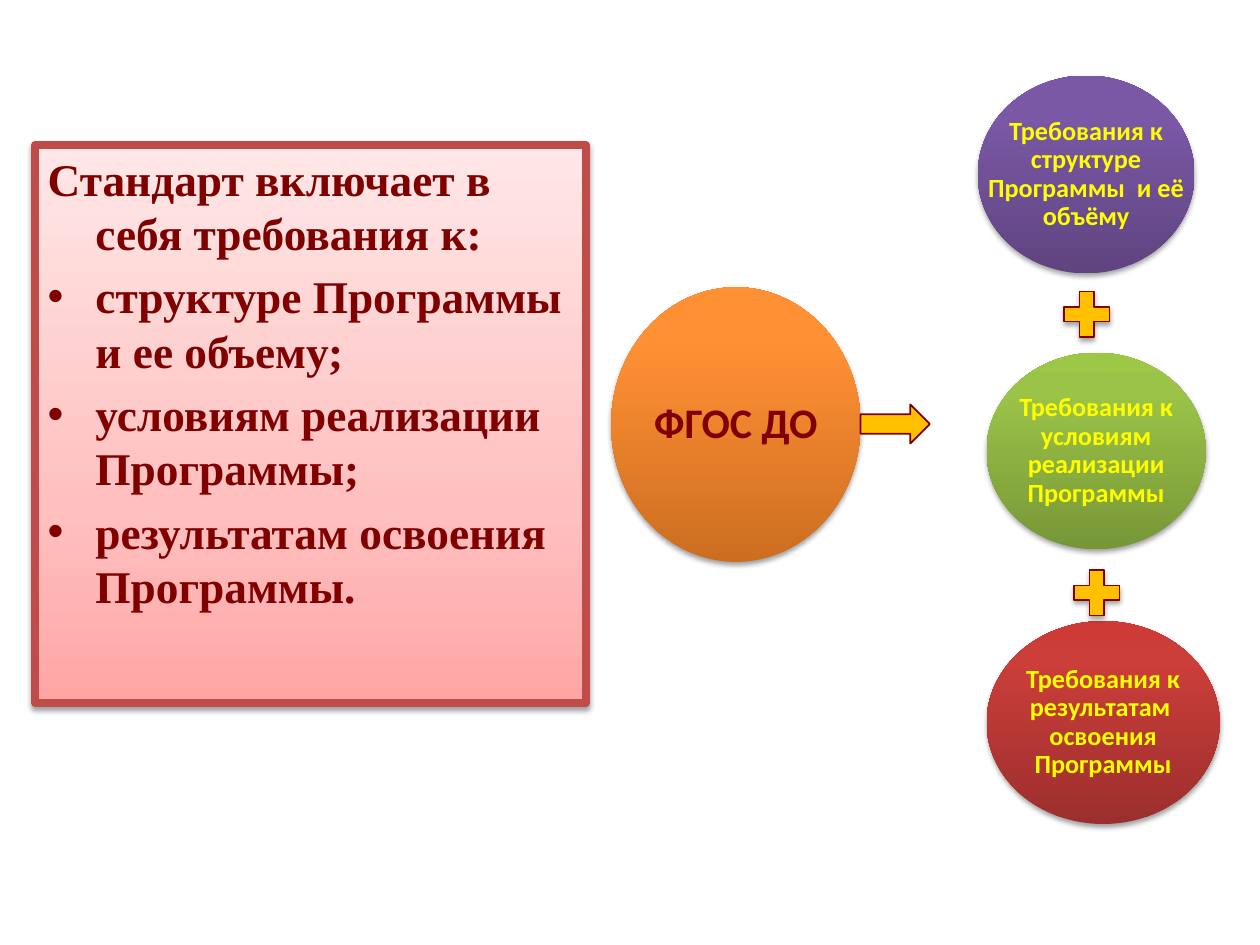
"""Build a slide on the three groups of requirements in the standard."""
from copy import deepcopy
from dataclasses import dataclass

from lxml import etree
from pptx import Presentation
from pptx.dml.color import RGBColor
from pptx.enum.shapes import MSO_SHAPE
from pptx.enum.text import MSO_ANCHOR, PP_ALIGN
from pptx.oxml.ns import qn
from pptx.util import Pt

RECT, OVAL = MSO_SHAPE.RECTANGLE, MSO_SHAPE.OVAL
PLUS, ARROW = MSO_SHAPE.MATH_PLUS, MSO_SHAPE.RIGHT_ARROW
TOP, MIDDLE = MSO_ANCHOR.TOP, MSO_ANCHOR.MIDDLE
LEFT, CENTER = PP_ALIGN.LEFT, PP_ALIGN.CENTER
SCALE = 9144


@dataclass(frozen=True)
class Theme:
    """Colours, fonts and type sizes of the slide."""
    serif: str = "Times New Roman"
    sans: str = "Calibri"
    body: float = 25.9
    hub: int = 24
    label: int = 15
    dark: str = "800000"
    bright: str = "FFFF00"
    gold: str = "FFC000"
    edge: str = "BF4C48"
    pink: tuple = ((0, "FFA6A5"), (0.35, "FFC0BF"), (1, "FFE7E7"))
    orange: tuple = ((0, "CC6E20"), (0.8, "FF9034"), (1, "FF9136"))
    purple: tuple = ((0, "5F4480"), (0.8, "7B58A6"), (1, "7C57A8"))
    green: tuple = ((0, "779737"), (0.8, "9BC348"), (1, "9DC746"))
    red: tuple = ((0, "9C2F2D"), (0.8, "CB3E3A"), (1, "CE3B37"))


def px(*vals):
    """Turn px into EMU."""
    return [val * SCALE for val in vals]


def rgb(code):
    """Turn a hex code into a colour."""
    return RGBColor.from_string(code)


class Deck:
    """Holds the style and the current slide."""

    def __init__(self, theme):
        """Start a deck with one blank slide."""
        self.theme = theme
        self.prs = Presentation()
        self.prs.slide_width, self.prs.slide_height = px(1000, 750)
        self.slide = self.prs.slides.add_slide(self.prs.slide_layouts[6])

    def shape(self, kind, box, fill, line=None, width=0.75, shade=True):
        """Add a preset shape with a plain or graded fill."""
        item = self.slide.shapes.add_shape(kind, *px(*box))
        if isinstance(fill, str):
            item.fill.solid()
            item.fill.fore_color.rgb = rgb(fill)
        else:
            self.grade(item, fill)
        if line:
            item.line.color.rgb = rgb(line)
            item.line.width = Pt(width)
        else:
            item.line.fill.background()
        item.shadow.inherit = False
        if shade:
            self.shade(item)
        return item

    def grade(self, item, stops):
        """Fill a shape with a gradient that rises from its foot."""
        item.fill.gradient()
        item.fill.gradient_angle = 90
        group = item.element.spPr.find(".//" + qn("a:gsLst"))
        group.append(deepcopy(group[-1]))
        for stop, (place, code) in zip(item.fill.gradient_stops, stops):
            stop.position = place
            stop.color.rgb = rgb(code)

    def shade(self, item):
        """Give a shape a soft shadow below it."""
        effect = item.element.spPr.find(qn("a:effectLst"))
        outer = etree.SubElement(
            effect, qn("a:outerShdw"), blurRad=str(Pt(3.1)),
            dist=str(Pt(1.7)), dir="5400000", rotWithShape="0")
        color = etree.SubElement(outer, qn("a:srgbClr"), val="000000")
        etree.SubElement(color, qn("a:alpha"), val="36000")

    def font(self, para, name, size, code):
        """Set the bold font of a paragraph."""
        para.font.name, para.font.size = name, Pt(size)
        para.font.bold = True
        para.font.color.rgb = rgb(code)

    def panel(self, box, head, items):
        """Add a framed panel with a heading and bullets."""
        look = self.theme
        frame = self.shape(RECT, box, look.pink, look.edge, 4.5).text_frame
        frame.word_wrap, frame.vertical_anchor = True, TOP
        for num, text in enumerate([head, *items]):
            para = frame.add_paragraph() if num else frame.paragraphs[0]
            para.text, para.alignment = text, LEFT
            props = para._p.get_or_add_pPr()
            indent = px(38)[0]
            props.set("marL", str(indent))
            props.set("indent", str(-indent))
            if num:
                para.space_before = Pt(5)
                etree.SubElement(props, qn("a:buFont"), typeface="Arial")
                etree.SubElement(props, qn("a:buChar"), char="•")
            self.font(para, look.serif, look.body, look.dark)

    def disc(self, box, fill, text, size, code):
        """Add an ellipse with a label across its full width."""
        self.shape(OVAL, box, fill)
        frame = self.slide.shapes.add_textbox(*px(*box)).text_frame
        frame.word_wrap, frame.vertical_anchor = True, MIDDLE
        frame.margin_left = frame.margin_right = px(2)[0]
        frame.margin_top = frame.margin_bottom = px(2)[0]
        para = frame.paragraphs[0]
        para.text, para.alignment = text, CENTER
        para.line_spacing = 0.9
        self.font(para, self.theme.sans, size, code)

    def plus(self, left, top):
        """Add a plus sign."""
        self.shape(PLUS, (left, top, 49, 49), self.theme.gold, self.theme.dark)

    def arrow(self, box):
        """Add a block arrow."""
        look = self.theme
        self.shape(ARROW, box, look.gold, look.dark, 1, shade=False)


def main():
    """Build and save the slide."""
    look = Theme()
    deck = Deck(look)
    deck.panel((28, 115, 437, 443), "Стандарт включает в себя требования к:", [
        "структуре Программы и ее объему;",
        "условиям реализации Программы;",
        "результатам освоения Программы."])
    parts = [
        ((776, 60, 172, 157), look.purple, "структуре Программы  и её объёму"),
        ((783, 280, 174, 156), look.green, "условиям реализации Программы"),
        ((783, 493, 185, 161), look.red, "результатам  освоения Программы")]
    for box, fill, text in parts:
        deck.disc(box, fill, f"Требования к {text}", look.label, look.bright)
    for spot in ((838, 225), (846, 446)):
        deck.plus(*spot)
    deck.disc((485, 228, 198, 218), look.orange, "ФГОС ДО", look.hub, look.dark)
    deck.arrow((683, 321, 55, 31))
    deck.prs.save("out.pptx")


if __name__ == "__main__":
    main()
